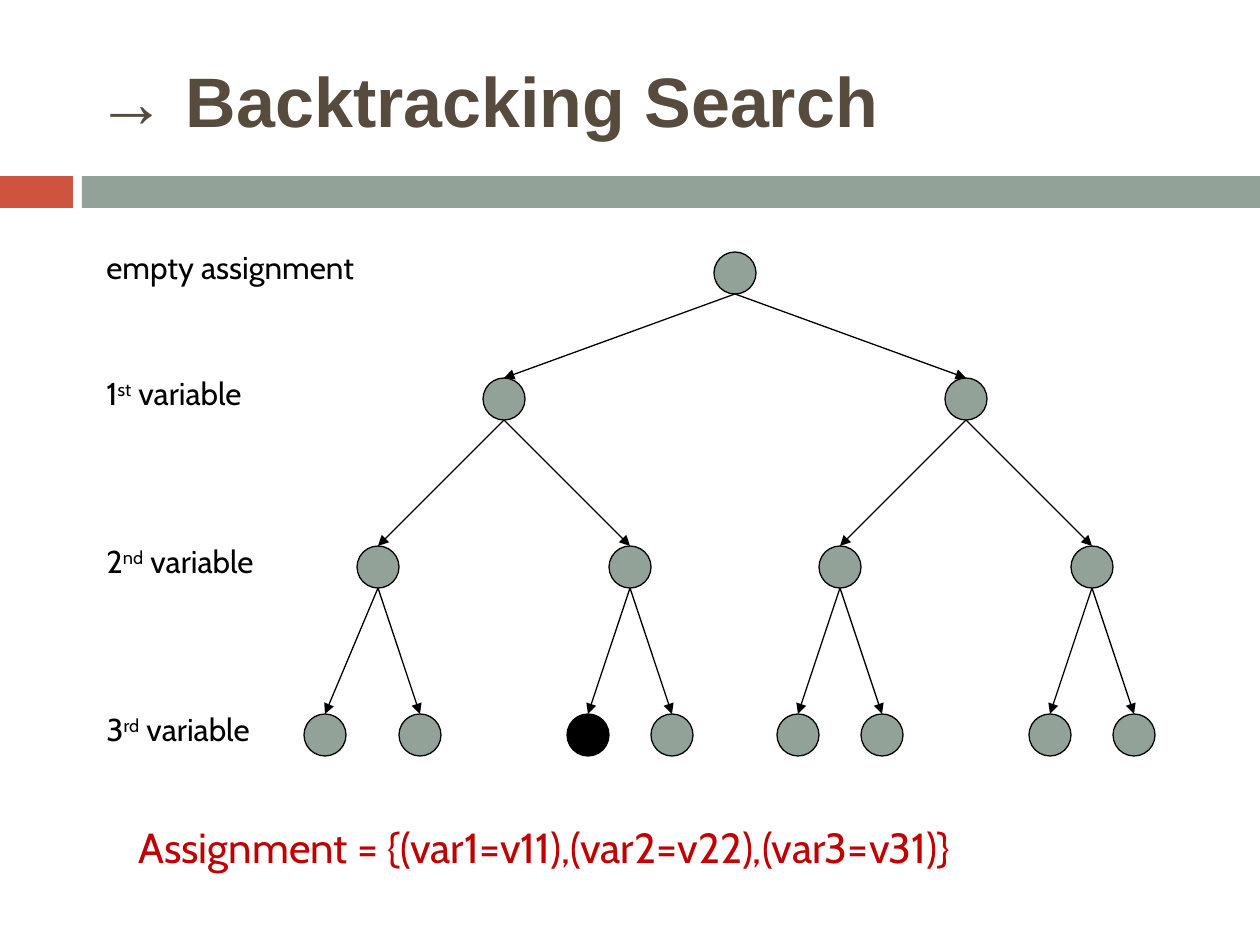
from lxml.etree import SubElement
from pptx import Presentation
from pptx.dml.color import RGBColor
from pptx.enum.shapes import MSO_CONNECTOR as Connector, MSO_SHAPE as Shape
from pptx.enum.text import MSO_ANCHOR as Anchor, PP_ALIGN as Align
from pptx.oxml.ns import qn
from pptx.util import Pt

PX = 914400 / 126
BLACK = RGBColor(0x00, 0x00, 0x00)
SAGE = RGBColor(0x93, 0xA2, 0x99)
RUST = RGBColor(0xCF, 0x54, 0x3F)
BROWN = RGBColor(0x56, 0x4B, 0x3C)
RED = RGBColor(0xC0, 0x00, 0x00)

NODE = 42
LEVELS = [
    (252, [735]),
    (378, [504, 966]),
    (546, [378, 630, 840, 1092]),
    (714, [325, 420, 588, 672, 798, 882, 1050, 1134]),
]
CURRENT = (714, 588)
LABELS = [
    [("empty assignment", False)],
    [("1", False), ("st", True), (" variable", False)],
    [("2", False), ("nd", True), (" variable", False)],
    [("3", False), ("rd", True), (" variable", False)],
]
TITLE_FONT = {"name": "Arial", "size": Pt(40), "bold": True}
LABEL_FONT = {"name": "Cabin", "size": Pt(18)}
RESULT_FONT = {"name": "Cabin", "size": Pt(24)}


def px(*lengths):
    """Turn pixel lengths into EMU."""
    return [round(length * PX) for length in lengths]


def add_span(para, text, style, color, raised=False):
    """Append formatted text, optionally as superscript."""
    span = para.add_run()
    span.text = text
    for name, value in style.items():
        setattr(span.font, name, value)
    span.font.color.rgb = color
    if raised:
        span.font._element.set("baseline", "30000")


def add_title(page, text):
    """Place and format the title placeholder."""
    title = page.shapes.title
    title.left, title.top, title.width, title.height = px(84, 32, 1124, 136)
    title.text_frame.vertical_anchor = Anchor.MIDDLE
    para = title.text_frame.paragraphs[0]
    para.alignment = Align.LEFT
    add_span(para, text, TITLE_FONT, BROWN)


def add_filled(page, kind, bounds, fill, outlined=False):
    """Add a filled shape with a thin black outline or none."""
    shape = page.shapes.add_shape(kind, *px(*bounds))
    shape.shadow.inherit = False
    shape.fill.solid()
    shape.fill.fore_color.rgb = fill
    if outlined:
        shape.line.color.rgb = BLACK
        shape.line.width = Pt(0.75)
    else:
        shape.line.fill.background()
    return shape


def add_branch(page, parent, child):
    """Draw an arrow from the bottom of a parent to the top of its child."""
    start = parent.left + parent.width // 2, parent.top + parent.height
    end = child.left + child.width // 2, child.top
    branch = page.shapes.add_connector(Connector.STRAIGHT, *start, *end)
    branch.end_connect(child, 0)
    branch.line.color.rgb = BLACK
    branch.line.width = Pt(0.75)
    SubElement(branch.line._get_or_add_ln(), qn("a:tailEnd"), type="triangle")
    SubElement(branch._element.spPr, qn("a:effectLst"))


def add_tree(page):
    """Draw the binary search tree level by level."""
    parents = []
    for top, centers in LEVELS:
        nodes = []
        for index, center in enumerate(centers):
            fill = BLACK if (top, center) == CURRENT else SAGE
            bounds = center - NODE // 2, top, NODE, NODE
            node = add_filled(page, Shape.OVAL, bounds, fill, outlined=True)
            if parents:
                add_branch(page, parents[index // 2], node)
            nodes.append(node)
        parents = nodes


def add_text(page, bounds, spans, style, color):
    """Add a single-line text box."""
    box = page.shapes.add_textbox(*px(*bounds))
    box.text_frame.word_wrap = False
    for text, raised in spans:
        add_span(box.text_frame.paragraphs[0], text, style, color, raised)


def main():
    """Build the backtracking search slide."""
    deck = Presentation()
    deck.slide_width, deck.slide_height = px(1260, 945)
    page = deck.slides.add_slide(deck.slide_layouts[5])
    add_filled(page, Shape.RECTANGLE, (0, 176, 73, 32), RUST)
    add_filled(page, Shape.RECTANGLE, (82, 176, 1178, 32), SAGE)
    add_title(page, "→ Backtracking Search")
    add_tree(page)
    for (top, _), spans in zip(LEVELS, LABELS):
        width = 280 if top == LEVELS[0][0] else 182
        add_text(page, (94, top - 10, width, 50), spans, LABEL_FONT, BLACK)
    result = [("Assignment = {(var1=v11),(var2=v22),(var3=v31)}", False)]
    add_text(page, (126, 815, 895, 63), result, RESULT_FONT, RED)
    deck.save("out.pptx")


if __name__ == "__main__":
    main()
